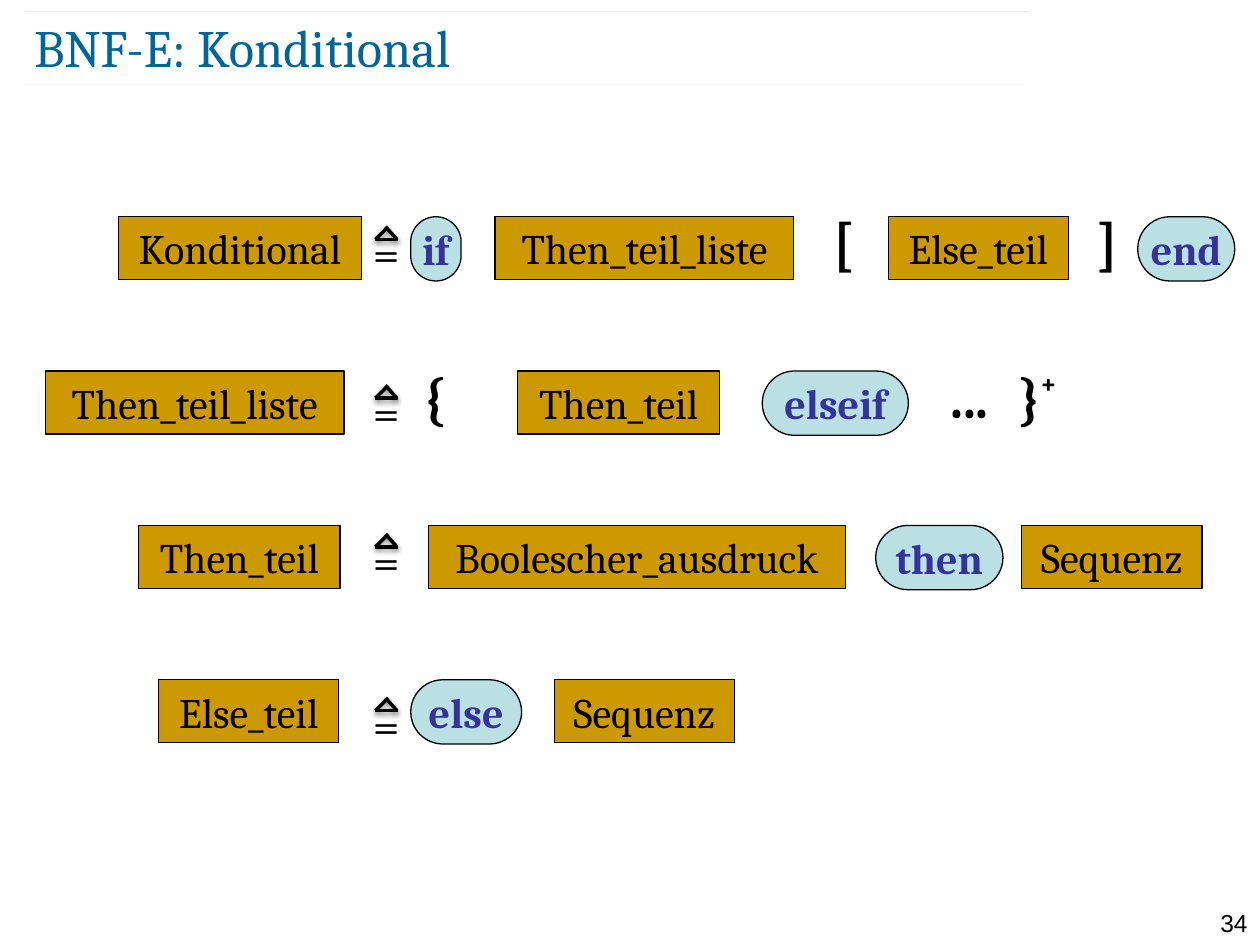
from dataclasses import dataclass
from enum import Enum

from lxml.etree import SubElement
from pptx import Presentation
from pptx.dml.color import RGBColor
from pptx.enum.shapes import MSO_CONNECTOR, MSO_SHAPE
from pptx.enum.text import MSO_ANCHOR, MSO_AUTO_SIZE, PP_ALIGN
from pptx.oxml.ns import qn
from pptx.util import Inches, Pt

FONT = "Cambria"
BLACK, TEAL, GOLD, PALE, INDIGO = "000000", "006699", "CC9900", "BBE0E3", "333399"
FIRST_TOP, ROW_PITCH = 1.72, 1.225


class Kind(Enum):
    NONTERMINAL = 1
    TERMINAL = 2
    META = 3


@dataclass
class Token:
    kind: Kind
    left: float
    width: float
    text: str
    superscript: str = ""


@dataclass
class Rule:
    define_top: float
    tokens: list[Token]


RULES = [
    Rule(1.72, [
        Token(Kind.NONTERMINAL, 0.94, 1.93, "Konditional"),
        Token(Kind.TERMINAL, 3.26, 0.4, "if"),
        Token(Kind.NONTERMINAL, 3.93, 2.37, "Then_teil_liste"),
        Token(Kind.META, 6.51, 0.37, "["),
        Token(Kind.NONTERMINAL, 7.05, 1.43, "Else_teil"),
        Token(Kind.META, 8.61, 0.37, "]"),
        Token(Kind.TERMINAL, 9.03, 0.77, "end"),
    ]),
    Rule(2.98, [
        Token(Kind.NONTERMINAL, 0.36, 2.37, "Then_teil_liste"),
        Token(Kind.META, 3.27, 0.36, "{"),
        Token(Kind.NONTERMINAL, 4.11, 1.6, "Then_teil"),
        Token(Kind.TERMINAL, 6.05, 1.16, "elseif"),
        Token(Kind.META, 7.4, 0.59, "..."),
        Token(Kind.META, 7.97, 0.53, "}", "+"),
    ]),
    Rule(4.16, [
        Token(Kind.NONTERMINAL, 1.1, 1.6, "Then_teil"),
        Token(Kind.NONTERMINAL, 3.4, 3.31, "Boolescher_ausdruck"),
        Token(Kind.TERMINAL, 6.95, 1.01, "then"),
        Token(Kind.NONTERMINAL, 8.11, 1.43, "Sequenz"),
    ]),
    Rule(5.46, [
        Token(Kind.NONTERMINAL, 1.26, 1.43, "Else_teil"),
        Token(Kind.TERMINAL, 3.26, 0.88, "else"),
        Token(Kind.NONTERMINAL, 4.4, 1.43, "Sequenz"),
    ]),
]


def rgb(color: str) -> RGBColor:
    return RGBColor.from_string(color)


def style(font, size: float, color: str = BLACK, bold: bool = False, name: str = FONT) -> None:
    font.name, font.size, font.bold = name, Pt(size), bold
    font.color.rgb = rgb(color)


def add_text(shapes, left: float, top: float, width: float, height: float, text: str):
    sp = shapes.add_textbox(Inches(left), Inches(top), Inches(width), Inches(height))
    p = sp.text_frame.paragraphs[0]
    p.add_run().text = text
    return sp, p


def add_line(shapes, x1: float, y1: float, x2: float, y2: float, color: str, width: float):
    line = shapes.add_connector(MSO_CONNECTOR.STRAIGHT, Inches(x1), Inches(y1), Inches(x2), Inches(y2))
    line.line.color.rgb = rgb(color)
    line.line.width = Pt(width)
    effects = SubElement(line._element.spPr, qn("a:effectLst"))
    return line, effects


def add_alpha(color_element, percent: int) -> None:
    SubElement(color_element, qn("a:alpha"), val=str(percent * 1000))


def add_title_rule(shapes, left: float, top: float) -> None:
    line, _ = add_line(shapes, left, top, left + 7.97, top, TEAL, 0.1)
    add_alpha(next(line._element.spPr.iter(qn("a:srgbClr"))), 35)


def add_define_sign(shapes, top: float) -> None:
    group = shapes.add_group_shape()
    sp, p = add_text(group.shapes, 2.86, top, 0.42, 0.57, "=")
    sp.text_frame.word_wrap = True
    sp.text_frame.auto_size = MSO_AUTO_SIZE.SHAPE_TO_FIT_TEXT
    style(p.font, 28)
    apex, base = top + 0.08, top + 0.18
    for x1, y1, x2 in [(3.06, apex, 3.15), (3.08, apex, 2.98), (3.16, base, 2.98)]:
        _, effects = add_line(group.shapes, x1, y1, x2, base, BLACK, 2)
        shadow = SubElement(effects, qn("a:outerShdw"), blurRad=str(Pt(3.1)),
                            dist=str(Pt(1.6)), dir="5400000", rotWithShape="0")
        add_alpha(SubElement(shadow, qn("a:srgbClr"), val=BLACK), 38)


def add_token(shapes, token: Token, top: float) -> None:
    if token.kind is Kind.META:
        sp, p = add_text(shapes, token.left, top - 0.12, token.width, 0.64, token.text)
        style(p.font, 32, bold=True)
        if token.superscript:
            r = p.add_run()
            r.text = token.superscript
            r.font.size = Pt(28)
            r.font._element.set("baseline", "50000")
    else:
        terminal = token.kind is Kind.TERMINAL
        sp = shapes.add_shape(MSO_SHAPE.ROUNDED_RECTANGLE if terminal else MSO_SHAPE.RECTANGLE,
                              Inches(token.left), Inches(top), Inches(token.width),
                              Inches(0.51 if terminal else 0.5))
        sp.shadow.inherit = False
        sp.fill.solid()
        sp.fill.fore_color.rgb = rgb(PALE if terminal else GOLD)
        sp.line.color.rgb = rgb(BLACK)
        sp.line.width = Pt(0.75)
        if terminal:
            sp.adjustments[0] = 0.5
        p = sp.text_frame.paragraphs[0]
        p.text = token.text
        style(p.font, 24, INDIGO if terminal else BLACK, terminal)
        sp.text_frame.vertical_anchor = MSO_ANCHOR.MIDDLE
    tf = sp.text_frame
    tf.word_wrap = False
    if token.kind is not Kind.TERMINAL:
        tf.auto_size = MSO_AUTO_SIZE.SHAPE_TO_FIT_TEXT
    p.alignment = PP_ALIGN.CENTER


def main() -> None:
    prs = Presentation()
    prs.slide_width, prs.slide_height = Inches(10), Inches(7.5)
    s = prs.slides.add_slide(prs.slide_layouts[5])

    add_title_rule(s.shapes, 0.18, 0.67)
    add_title_rule(s.shapes, 0.2, 0.09)
    _, p = add_text(s.shapes, 9.45, 7.16, 0.55, 0.24, "34")
    p.alignment = PP_ALIGN.RIGHT
    style(p.font, 14, name="Arial")

    title = s.shapes.title
    title.left, title.top = Inches(0.27), Inches(0.13)
    title.width, title.height = Inches(8.69), Inches(0.48)
    tf = title.text_frame
    tf.text = "BNF-E: Konditional"
    tf.margin_left = tf.margin_top = tf.margin_right = tf.margin_bottom = 0
    tf.vertical_anchor = MSO_ANCHOR.MIDDLE
    tf.auto_size = MSO_AUTO_SIZE.NONE
    tf.paragraphs[0].alignment = PP_ALIGN.LEFT
    style(tf.paragraphs[0].font, 30, TEAL)

    for i, rule in enumerate(RULES):
        for token in rule.tokens:
            add_token(s.shapes, token, FIRST_TOP + i * ROW_PITCH)
        add_define_sign(s.shapes, rule.define_top)

    prs.save("out.pptx")


if __name__ == "__main__":
    main()
